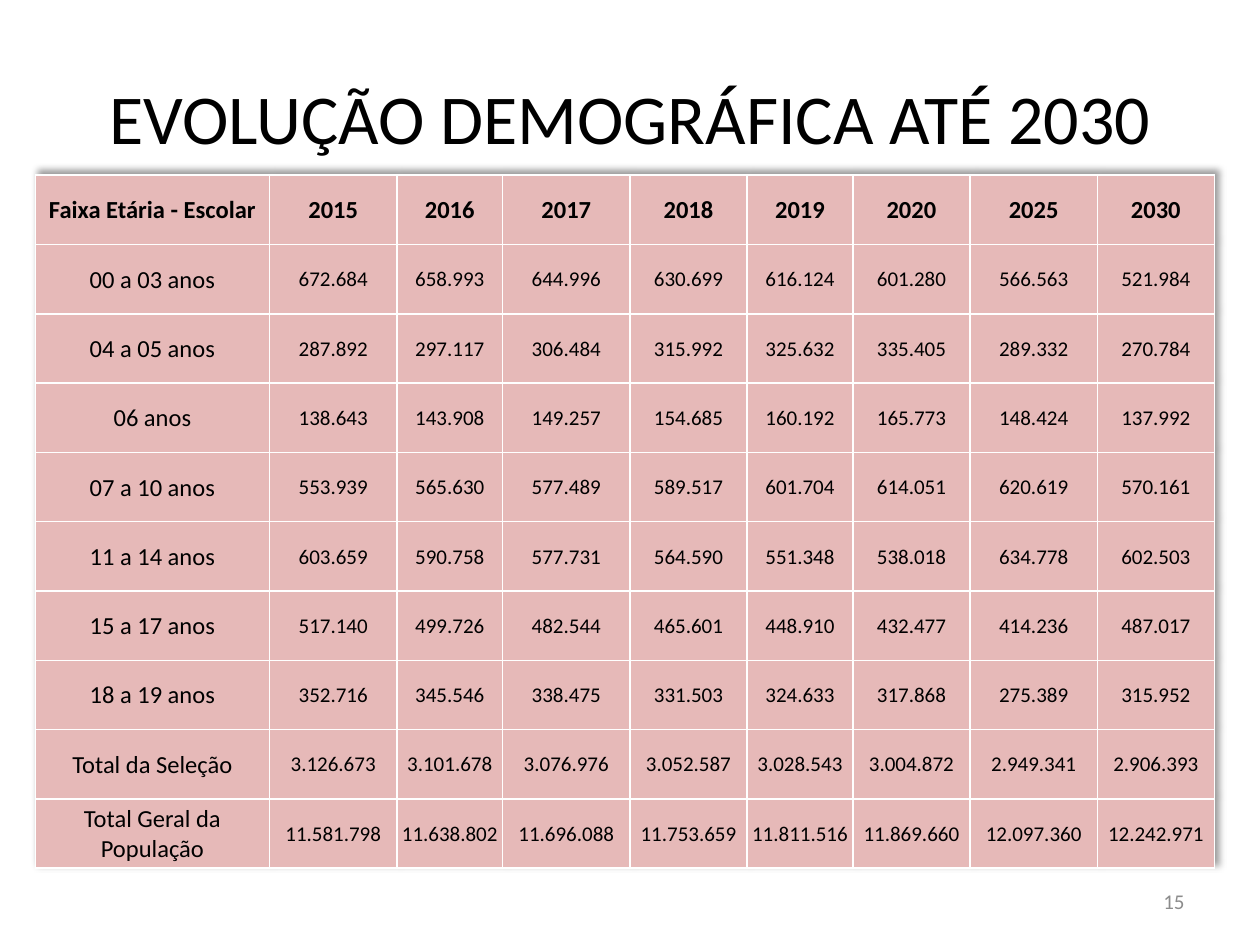
import pptx
import pptx.dml.color
import pptx.enum.text
import pptx.oxml
import pptx.oxml.ns
import pptx.util
from lxml import etree

Inches = pptx.util.Inches
Pt = pptx.util.Pt
RGBColor = pptx.dml.color.RGBColor
Align = pptx.enum.text.PP_ALIGN
Anchor = pptx.enum.text.MSO_ANCHOR
qn = pptx.oxml.ns.qn

BLACK = RGBColor(0x00, 0x00, 0x00)
WHITE = RGBColor(0xFF, 0xFF, 0xFF)
GRAY = RGBColor(0x8C, 0x8C, 0x8C)
PINK = RGBColor(0xE6, 0xB9, 0xB8)

COLUMN_WIDTHS = [1.86, 1.01, 0.84, 1.01, 0.93, 0.84, 0.93, 1.01, 0.93]
ROW_HEIGHT = 0.55
POPULATION = [
    ("Faixa Etária - Escolar", "2015 2016 2017 2018 2019 2020 2025 2030"),
    ("00 a 03 anos", "672.684 658.993 644.996 630.699 616.124 601.280 566.563 521.984"),
    ("04 a 05 anos", "287.892 297.117 306.484 315.992 325.632 335.405 289.332 270.784"),
    ("06 anos", "138.643 143.908 149.257 154.685 160.192 165.773 148.424 137.992"),
    ("07 a 10 anos", "553.939 565.630 577.489 589.517 601.704 614.051 620.619 570.161"),
    ("11 a 14 anos", "603.659 590.758 577.731 564.590 551.348 538.018 634.778 602.503"),
    ("15 a 17 anos", "517.140 499.726 482.544 465.601 448.910 432.477 414.236 487.017"),
    ("18 a 19 anos", "352.716 345.546 338.475 331.503 324.633 317.868 275.389 315.952"),
    ("Total da Seleção",
     "3.126.673 3.101.678 3.076.976 3.052.587 3.028.543 3.004.872 2.949.341 2.906.393"),
    ("Total Geral da População",
     "11.581.798 11.638.802 11.696.088 11.753.659 11.811.516 11.869.660 12.097.360 12.242.971"),
]
TABLE_SHADOW = """
<a:effectLst xmlns:a="http://schemas.openxmlformats.org/drawingml/2006/main">
  <a:outerShdw blurRad="50800" dist="38100" dir="18900000" algn="bl" rotWithShape="0">
    <a:srgbClr val="000000"><a:alpha val="40000"/></a:srgbClr>
  </a:outerShdw>
</a:effectLst>
"""


class SlideBuilder:
    font = "Calibri"

    def __init__(self, page):
        self.page = page

    def add_span(self, frame, text, size, color, align, bold=False):
        para = frame.paragraphs[0]
        para.alignment = align
        span = para.add_run()
        span.text = text
        span.font.name = self.font
        span.font.size = Pt(size)
        span.font.bold = bold
        span.font.color.rgb = color

    def text(self, left, top, width, height, text, size, color, align):
        box = self.page.shapes.add_textbox(
            Inches(left), Inches(top), Inches(width), Inches(height))
        frame = box.text_frame
        frame.word_wrap = True
        frame.vertical_anchor = Anchor.MIDDLE
        self.add_span(frame, text, size, color, align)

    def border(self, cell):
        properties = cell._tc.get_or_add_tcPr()
        for side in ("a:lnL", "a:lnR", "a:lnT", "a:lnB"):
            line = etree.SubElement(properties, qn(side), w=str(Pt(1)))
            fill = etree.SubElement(line, qn("a:solidFill"))
            etree.SubElement(fill, qn("a:srgbClr"), val=str(WHITE))

    def cell(self, cell, text, size, bold):
        self.border(cell)
        cell.fill.solid()
        cell.fill.fore_color.rgb = PINK
        cell.vertical_anchor = Anchor.MIDDLE
        cell.margin_left = cell.margin_right = cell.margin_top = Inches(0.01)
        cell.margin_bottom = 0
        self.add_span(cell.text_frame, text, size, BLACK, Align.CENTER, bold)

    def table(self, left, top, widths, row_height, rows):
        table = self.page.shapes.add_table(
            len(rows), len(widths), Inches(left), Inches(top),
            Inches(sum(widths)), Inches(row_height * len(rows))).table
        table.horz_banding = False
        table._tbl.tblPr.insert(0, pptx.oxml.parse_xml(TABLE_SHADOW))
        for column, width in zip(table.columns, widths):
            column.width = Inches(width)
        for row_index, (label, values) in enumerate(rows):
            table.rows[row_index].height = Inches(row_height)
            header = row_index == 0
            for column_index, text in enumerate([label] + values.split()):
                size = 14 if header or column_index == 0 else 12
                self.cell(table.cell(row_index, column_index), text, size, header)


def main():
    deck = pptx.Presentation()
    deck.slide_width = Inches(10)
    deck.slide_height = Inches(7.5)
    slide = SlideBuilder(deck.slides.add_slide(deck.slide_layouts[6]))
    slide.text(0.5, 0.3, 9, 1.25, "EVOLUÇÃO DEMOGRÁFICA ATÉ 2030", 40, BLACK, Align.CENTER)
    slide.table(0.28, 1.39, COLUMN_WIDTHS, ROW_HEIGHT, POPULATION)
    slide.text(7.17, 6.95, 2.33, 0.4, "15", 12, GRAY, Align.RIGHT)
    deck.save("out.pptx")


if __name__ == "__main__":
    main()
